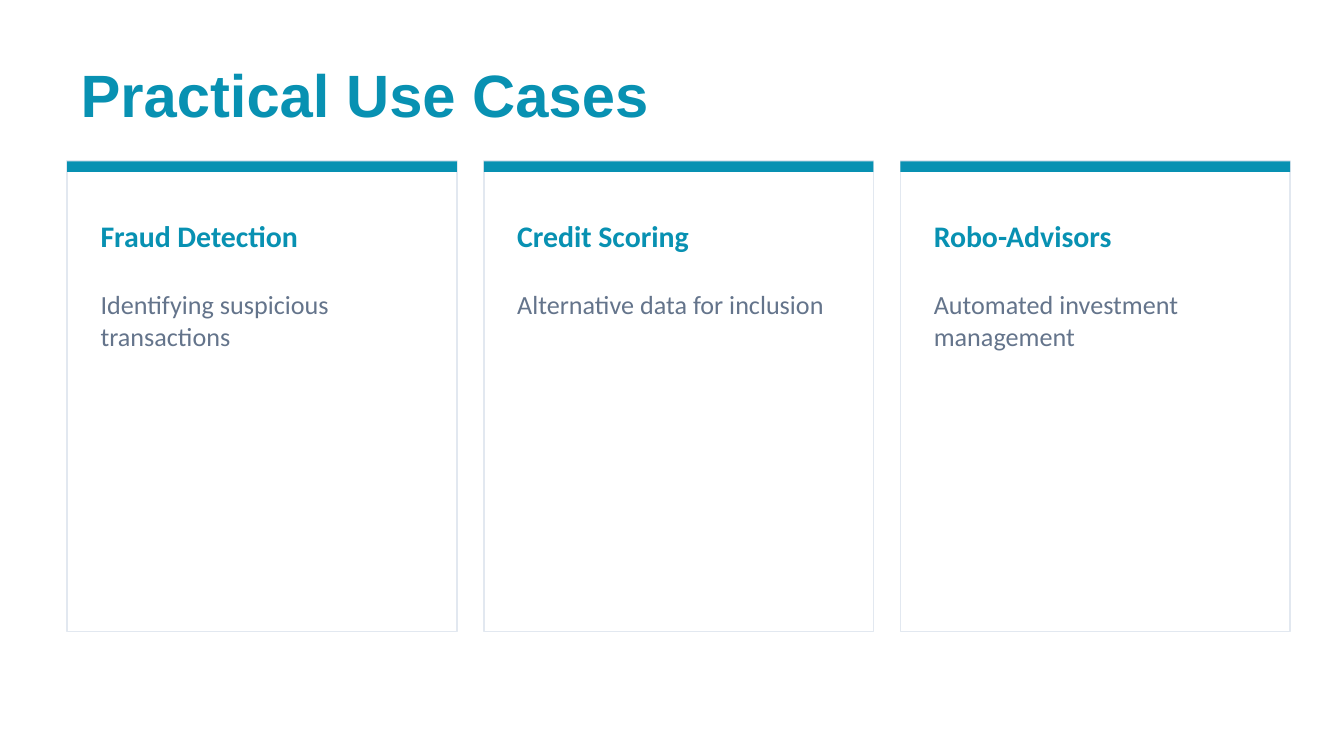
from pptx import Presentation
from pptx.dml import color
from pptx.enum import shapes, text
from pptx.util import Pt

TEAL, SLATE, BORDER, WHITE = "0891B2", "64748B", "E2E8F0", "FFFFFF"
HEADING = {"name": "Calibri", "size": Pt(16), "bold": True}
BODY = {"name": "Calibri", "size": Pt(14), "bold": False}
TITLE = {"name": "Arial", "size": Pt(32), "bold": True}


def rgb(value):
    return color.RGBColor.from_string(value)


def write(shape, words, font_format, font_color, anchor):
    frame = shape.text_frame
    frame.word_wrap = True
    frame.auto_size = text.MSO_AUTO_SIZE.NONE
    frame.vertical_anchor = anchor
    paragraph = frame.paragraphs[0]
    paragraph.alignment = text.PP_ALIGN.LEFT
    run = paragraph.add_run()
    run.text = words
    for name, value in font_format.items():
        setattr(run.font, name, value)
    run.font.color.rgb = rgb(font_color)


presentation = Presentation()
presentation.slide_width, presentation.slide_height = Pt(720), Pt(405)
slide = presentation.slides.add_slide(presentation.slide_layouts[5])
slide.background.fill.solid()
slide.background.fill.fore_color.rgb = rgb(WHITE)

# Title
title = slide.shapes.title
title.left, title.top, title.width, title.height = Pt(36), Pt(28.8), Pt(648), Pt(43.2)
write(title, "Practical Use Cases", TITLE, TEAL, text.MSO_ANCHOR.MIDDLE)

# Use case cards
use_cases = [
    ("Fraud Detection", "Identifying suspicious transactions"),
    ("Credit Scoring", "Alternative data for inclusion"),
    ("Robo-Advisors", "Automated investment management"),
]
card_left, card_top, card_width, card_gap = 36, 86.4, 208.8, 14.4
padding = 10.8

for index, (heading, description) in enumerate(use_cases):
    left = card_left + index * (card_width + card_gap)

    # Card panel and its accent bar
    for height, fill, line in [(252, WHITE, BORDER), (5.76, TEAL, None)]:
        shape = slide.shapes.add_shape(
            shapes.MSO_SHAPE.RECTANGLE, Pt(left), Pt(card_top), Pt(card_width), Pt(height))
        shape.shadow.inherit = False
        shape.fill.solid()
        shape.fill.fore_color.rgb = rgb(fill)
        if line:
            shape.line.color.rgb = rgb(line)
            shape.line.width = Pt(1)
        else:
            shape.line.fill.background()

    # Heading and description
    for words, top, height, font_format, font_color, anchor in [
        (heading, 108, 36, HEADING, TEAL, text.MSO_ANCHOR.MIDDLE),
        (description, 151.2, 172.8, BODY, SLATE, text.MSO_ANCHOR.TOP),
    ]:
        box = slide.shapes.add_textbox(
            Pt(left + padding), Pt(top), Pt(card_width - 2 * padding), Pt(height))
        write(box, words, font_format, font_color, anchor)

presentation.save("out.pptx")
